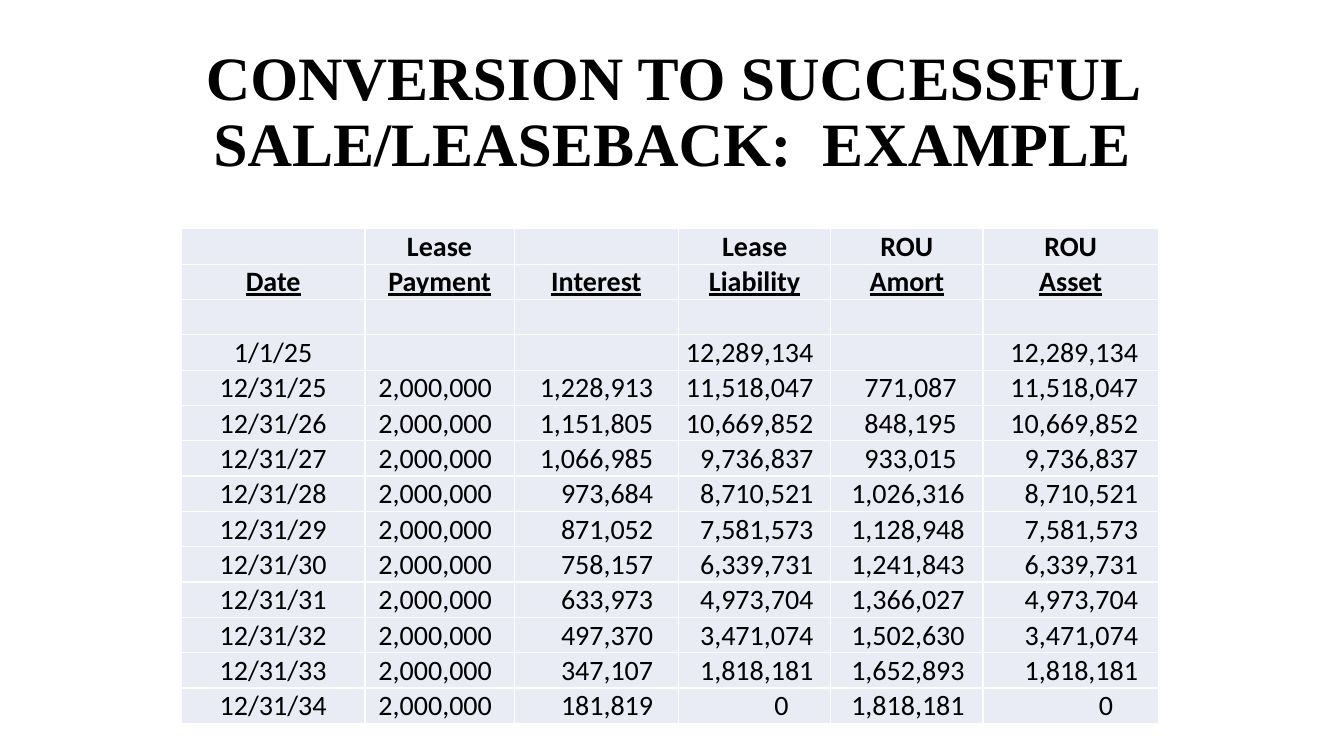
from lxml.etree import SubElement
from pptx import Presentation
from pptx.dml.color import RGBColor
from pptx.enum.text import MSO_ANCHOR, MSO_AUTO_SIZE, PP_ALIGN
from pptx.oxml.ns import qn
from pptx.util import Inches, Pt

TITLE = "CONVERSION TO SUCCESSFUL SALE/LEASEBACK:  EXAMPLE"
HEADINGS = [
    ["", "Lease", "", "Lease", "ROU", "ROU"],
    ["Date", "Payment", "Interest", "Liability", "Amort", "Asset"],
    [""] * 6,
]
OPENING = ["1/1/25", "", "", "12,289,134", "", "12,289,134"]
YEARS = [
    ("1,228,913", "11,518,047", "771,087"),
    ("1,151,805", "10,669,852", "848,195"),
    ("1,066,985", "9,736,837", "933,015"),
    ("973,684", "8,710,521", "1,026,316"),
    ("871,052", "7,581,573", "1,128,948"),
    ("758,157", "6,339,731", "1,241,843"),
    ("633,973", "4,973,704", "1,366,027"),
    ("497,370", "3,471,074", "1,502,630"),
    ("347,107", "1,818,181", "1,652,893"),
    ("181,819", "0", "1,818,181"),
]
COLUMN_WEIGHTS = [1.82, 1.48, 1.63, 1.51, 1.51, 1.74]
RIGHT_INSETS = [0.01, 0.22, 0.25, 0.17, 0.18, 0.2]
AMORT = 4


def color(hex_value):
    return RGBColor.from_string(hex_value)


class LeaseSlide:
    ink, band, rule = "000000", "E9EBF5", "FFFFFF"
    title_font, body_font = "Times New Roman", "Calibri"
    title_size, body_size = 44, 20

    def __init__(self, deck):
        self.width, self.height = deck.slide_width, deck.slide_height
        self.slide = deck.slides.add_slide(deck.slide_layouts[5])

    def box(self, left, top, width, height):
        return (int(left * self.width), int(top * self.height),
                int(width * self.width), int(height * self.height))

    def run(self, paragraph, wording, font, size, bold=False, underline=False):
        run = paragraph.add_run()
        run.text = wording
        run.font.name, run.font.size = font, Pt(size)
        run.font.bold, run.font.underline = bold, underline
        run.font.color.rgb = color(self.ink)

    def title(self, wording, *shares):
        heading = self.slide.shapes.title
        heading.left, heading.top, heading.width, heading.height = self.box(*shares)
        frame = heading.text_frame
        frame.word_wrap = True
        frame.auto_size = MSO_AUTO_SIZE.NONE
        frame.vertical_anchor = MSO_ANCHOR.MIDDLE
        paragraph = frame.paragraphs[0]
        paragraph.alignment = PP_ALIGN.CENTER
        paragraph.line_spacing = 0.9
        self.run(paragraph, wording, self.title_font, self.title_size, bold=True)

    def borders(self, cell):
        properties = cell._tc.get_or_add_tcPr()
        for side in ("lnL", "lnR", "lnT", "lnB"):
            line = SubElement(properties, qn(f"a:{side}"), w=str(Pt(1)))
            fill = SubElement(line, qn("a:solidFill"))
            SubElement(fill, qn("a:srgbClr"), val=self.rule)

    def cell(self, cell, wording, row, column):
        self.borders(cell)
        cell.fill.solid()
        cell.fill.fore_color.rgb = color(self.band)
        cell.vertical_anchor = MSO_ANCHOR.BOTTOM
        cell.margin_left = cell.margin_top = cell.margin_right = Inches(0.01)
        cell.margin_bottom = 0
        paragraph = cell.text_frame.paragraphs[0]
        heading = row < len(HEADINGS)
        if heading or column == 0:
            paragraph.alignment = PP_ALIGN.CENTER
        else:
            paragraph.alignment = PP_ALIGN.RIGHT
            inset = RIGHT_INSETS[column]
            if wording == "0":
                inset += 0.25
            elif column == AMORT and len(wording) == len("771,087"):
                inset += 0.08
            cell.margin_right = Inches(inset)
        if wording:
            self.run(paragraph, wording, self.body_font, self.body_size,
                     bold=heading, underline=row == 1)
        else:
            ending = paragraph._p.get_or_add_endParaRPr()
            ending.set("sz", str(self.body_size * 100))
            SubElement(ending, qn("a:latin"), typeface=self.body_font)

    def table(self, rows, weights, *shares):
        left, top, width, height = self.box(*shares)
        schedule = self.slide.shapes.add_table(
            len(rows), len(weights), left, top, width, height).table
        schedule.first_row = schedule.horz_banding = False
        for column, weight in zip(schedule.columns, weights):
            column.width = int(width * weight / sum(weights))
        for row, wordings in enumerate(rows):
            schedule.rows[row].height = height // len(rows)
            for column, wording in enumerate(wordings):
                self.cell(schedule.cell(row, column), wording, row, column)


def main():
    deck = Presentation()
    deck.slide_width, deck.slide_height = Inches(13.33), Inches(7.5)
    lease = LeaseSlide(deck)
    lease.title(TITLE, 0.92 / 13.33, 0.4 / 7.5, 11.5 / 13.33, 1.45 / 7.5)
    yearly = [
        [f"12/31/{year}", "2,000,000", interest, liability, amort, liability]
        for year, (interest, liability, amort) in enumerate(YEARS, 25)
    ]
    lease.table(HEADINGS + [OPENING] + yearly, COLUMN_WEIGHTS,
                1.8 / 13.33, 2.27 / 7.5, 9.69 / 13.33, 4.9 / 7.5)
    deck.save("out.pptx")


if __name__ == "__main__":
    main()
